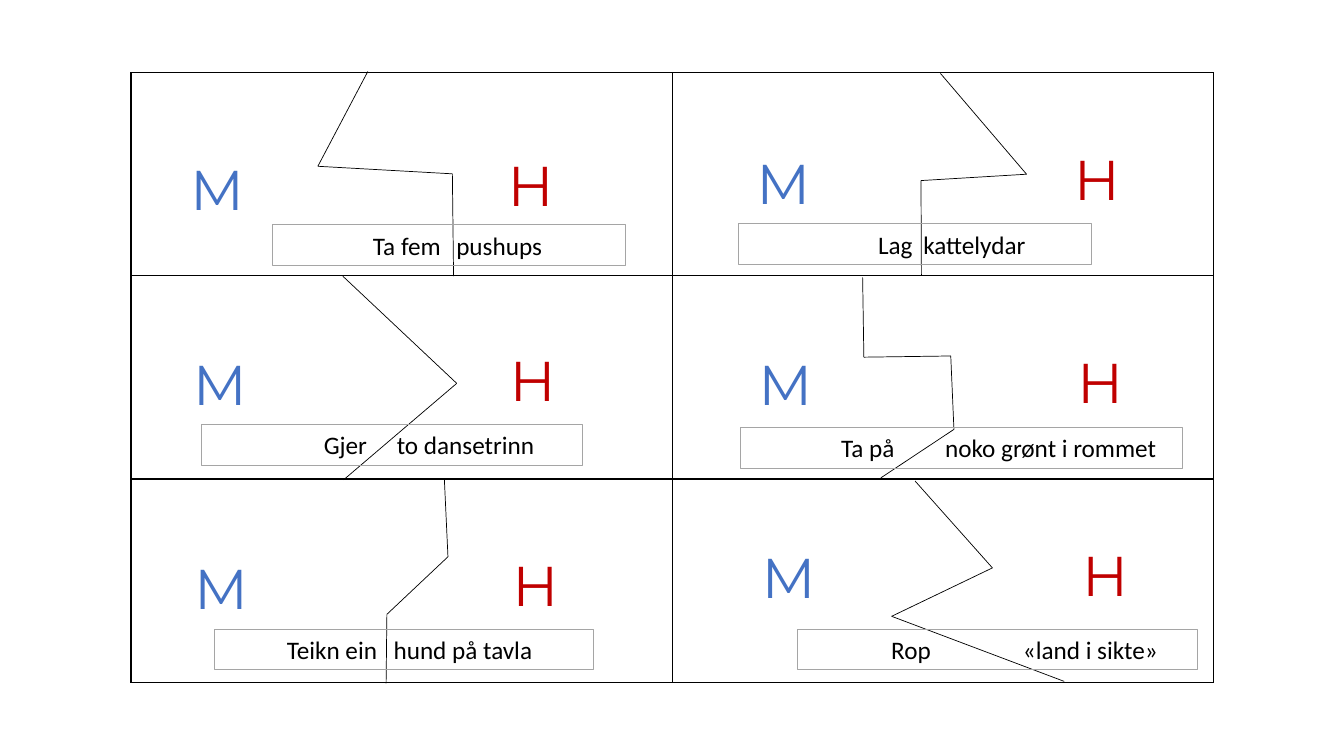
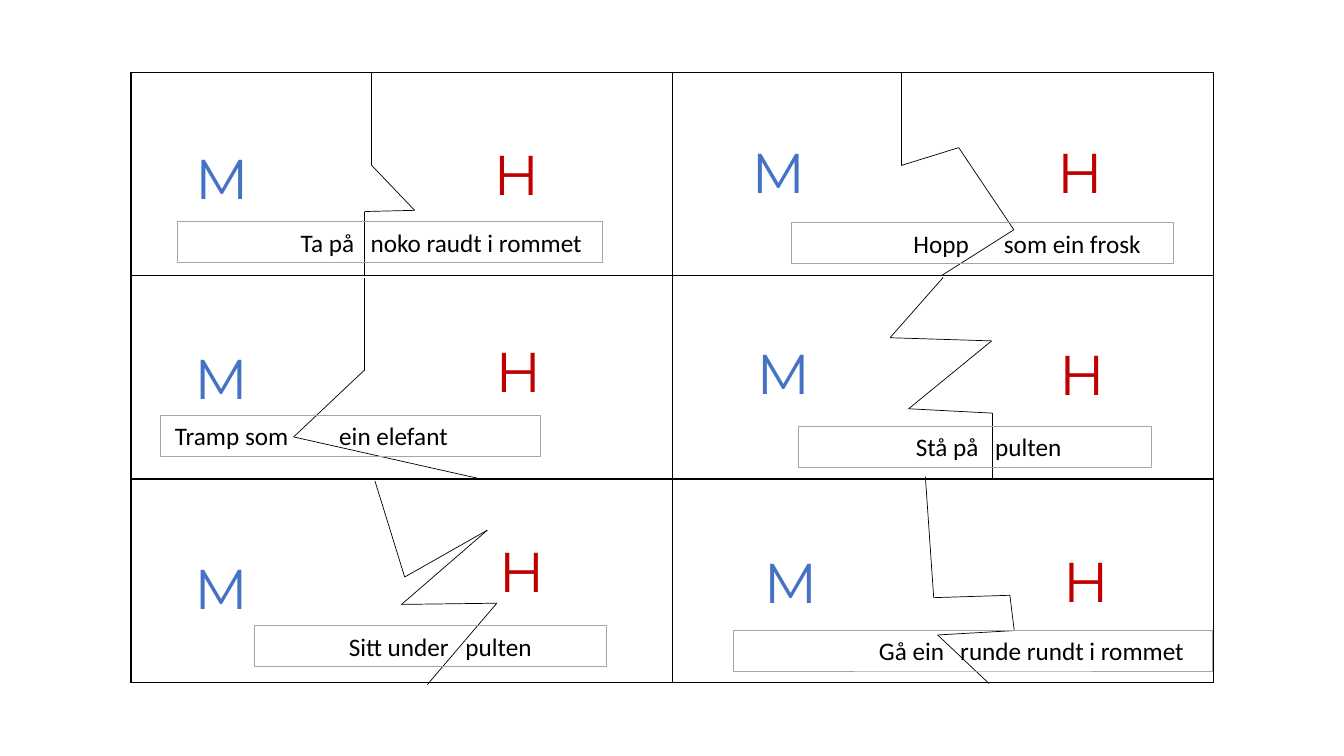
from itertools import pairwise

from lxml import etree
from pptx import Presentation
from pptx.dml.color import RGBColor
from pptx.enum import shapes, text
from pptx.oxml import ns
from pptx.util import Cm, Pt

BLACK, GREY, BLUE, RED = "000000", "A5A5A5", "4472C4", "C00000"
INSET = 0.25
TABLE_LEFT, TABLE_TOP = 3.3, 1.83
COLUMN_WIDTH, ROW_HEIGHT = 13.64, 5.12
ROWS, COLUMNS = 3, 2


def color(value):
    return RGBColor.from_string(value)


def add_child(parent, tag, **attributes):
    return etree.SubElement(parent, ns.qn(tag), attributes)


# Each card, in reading order: positions of M and H, the strip (left, top, width),
# its two phrases with their left edges, and the corners of the cut; all in cm
SLIDES = [
    [
        ((4.55, 3.76), (12.55, 3.68), (6.86, 5.66, 8.89),
         [("Ta fem", 9.4), ("pushups", 11.5)],
         [(9.27, 1.8), (8.01, 4.19), (11.4, 4.38), (11.43, 6.96)]),
        ((18.82, 3.61), (26.82, 3.51), (18.62, 5.64, 8.89),
         [("Lag", 22.13), ("kattelydar", 23.27)],
         [(23.7, 1.85), (25.87, 4.39), (23.21, 4.55), (23.22, 6.93)]),
        ((4.62, 8.69), (12.6, 8.59), (5.08, 10.69, 9.6),
         [("Gjer", 8.16), ("to dansetrinn", 10)],
         [(8.64, 6.96), (11.51, 9.66), (8.66, 12.09)]),
        ((18.87, 8.69), (26.9, 8.64), (18.67, 10.77, 11.13),
         [("Ta på", 21.2), ("noko grønt i rommet", 23.82)],
         [(21.74, 6.99), (21.77, 9), (23.96, 8.97), (24.04, 10.82), (22.2, 12.04)]),
        ((4.65, 13.82), (12.67, 13.74), (5.41, 15.85, 9.55),
         [("Teikn ein", 7.23), ("hund på tavla", 9.92)],
         [(11.2, 12.09), (11.29, 14.03), (9.75, 15.48), (9.73, 17.22)]),
        ((18.95, 13.54), (27.03, 13.49), (20.09, 15.85, 10.08),
         [("Rop", 22.46), ("«land i sikte»", 25.78)],
         [(23.06, 12.12), (25.01, 14.31), (22.47, 15.53), (26.82, 17.17)]),
    ],
    [
        ((4.67, 3.48), (12.19, 3.4), (4.47, 5.59, 10.72),
         [("Ta på", 7.58), ("noko raudt i rommet", 9.34)],
         [(9.35, 1.83), (9.35, 4.15), (10.45, 5.3), (9.19, 5.33), (9.19, 6.96)]),
        ((18.69, 3.33), (26.39, 3.35), (19.94, 5.61, 9.63),
         [("Hopp", 23.02), ("som ein frosk", 25.3)],
         [(22.71, 1.83), (22.71, 4.17), (24.16, 3.72), (25.55, 5.79), (23.75, 6.93)]),
        ((4.65, 8.53), (12.24, 8.36), (4.04, 10.46, 9.58),
         [("Tramp som", 4.41), ("ein elefant", 8.55)],
         [(9.19, 7.01), (9.19, 9.32), (7.4, 11.01), (12.12, 12.07)]),
        ((18.82, 8.41), (26.44, 8.43), (20.12, 10.74, 8.89),
         [("Stå på", 23.08), ("pulten", 25.08)],
         [(23.77, 6.99), (22.43, 8.51), (24.99, 8.59), (22.9, 10.3), (25, 10.41),
          (25, 12.09)]),
        ((4.65, 13.82), (12.32, 13.39), (6.4, 15.77, 8.89),
         [("Sitt under", 8.79), ("pulten", 11.73)],
         [(9.45, 12.12), (10.2, 14.54), (12.28, 13.36), (10.12, 15.23), (12.52, 15.2),
          (10.77, 17.25)]),
        ((19, 13.67), (26.54, 13.64), (18.47, 15.88, 12.09),
         [("Gå ein", 22.15), ("runde rundt i rommet", 24.2)],
         [(23.32, 12.01), (23.53, 15.06), (25.45, 15), (25.56, 15.89), (23.63, 16),
          (24.92, 17.22)]),
    ],
]

presentation = Presentation()
presentation.slide_width, presentation.slide_height = Cm(33.87), Cm(19.05)

for cards in SLIDES:
    slide = presentation.slides.add_slide(presentation.slide_layouts[6])

    # Grid of empty cells with black borders
    table = slide.shapes.add_table(
        ROWS, COLUMNS, Cm(TABLE_LEFT), Cm(TABLE_TOP),
        Cm(COLUMNS * COLUMN_WIDTH), Cm(ROWS * ROW_HEIGHT)).table
    table.first_row = table.horz_banding = False
    for row in table.rows:
        row.height = Cm(ROW_HEIGHT)
    for cell in table.iter_cells():
        properties = cell._tc.get_or_add_tcPr()
        for side in ("a:lnL", "a:lnR", "a:lnT", "a:lnB"):
            border = add_child(properties, side, w=str(Pt(1)))
            add_child(add_child(border, "a:solidFill"), "a:srgbClr", val=BLACK)
        cell.fill.background()

    for m_position, h_position, strip_place, phrases, corners in cards:
        # Zigzag cut through the card
        for start, end in pairwise(corners):
            connector = slide.shapes.add_connector(
                shapes.MSO_CONNECTOR.STRAIGHT, *map(Cm, start + end))
            connector.line.color.rgb = color(BLACK)
            connector.line.width = Pt(0.5)
            add_child(connector._element.spPr, "a:effectLst")

        # Letters of the two halves
        for letter, (left, top), width, letter_color in (
                ("M", m_position, 3.05, BLUE), ("H", h_position, 2.26, RED)):
            box = slide.shapes.add_textbox(Cm(left), Cm(top), Cm(width), Cm(1.96))
            box.text_frame.word_wrap = True
            paragraph = box.text_frame.paragraphs[0]
            paragraph.text = letter
            paragraph.font.name = "Montserrat"
            paragraph.font.size = Pt(40)
            paragraph.font.color.rgb = color(letter_color)

        # Strip with a phrase on each side of the cut, placed by tab stops
        left, top, width = strip_place
        strip = slide.shapes.add_shape(
            shapes.MSO_SHAPE.RECTANGLE, Cm(left), Cm(top), Cm(width), Cm(1.03))
        strip.shadow.inherit = False
        strip.fill.background()
        strip.line.color.rgb = color(GREY)
        strip.line.width = Pt(0.5)
        frame = strip.text_frame
        frame.word_wrap = True
        frame.margin_left = frame.margin_right = Cm(INSET)
        frame.vertical_anchor = text.MSO_ANCHOR.MIDDLE
        paragraph = frame.paragraphs[0]
        paragraph.alignment = text.PP_ALIGN.LEFT
        tab_stops = add_child(paragraph._p.get_or_add_pPr(), "a:tabLst")
        for phrase, phrase_left in phrases:
            position = Cm(phrase_left - left - INSET)
            add_child(tab_stops, "a:tab", pos=str(position), algn="l")
        paragraph.add_run().text = "".join("\t" + phrase for phrase, _ in phrases)
        paragraph.font.name = "Calibri"
        paragraph.font.size = Pt(18)
        paragraph.font.color.rgb = color(BLACK)

presentation.save("out.pptx")
